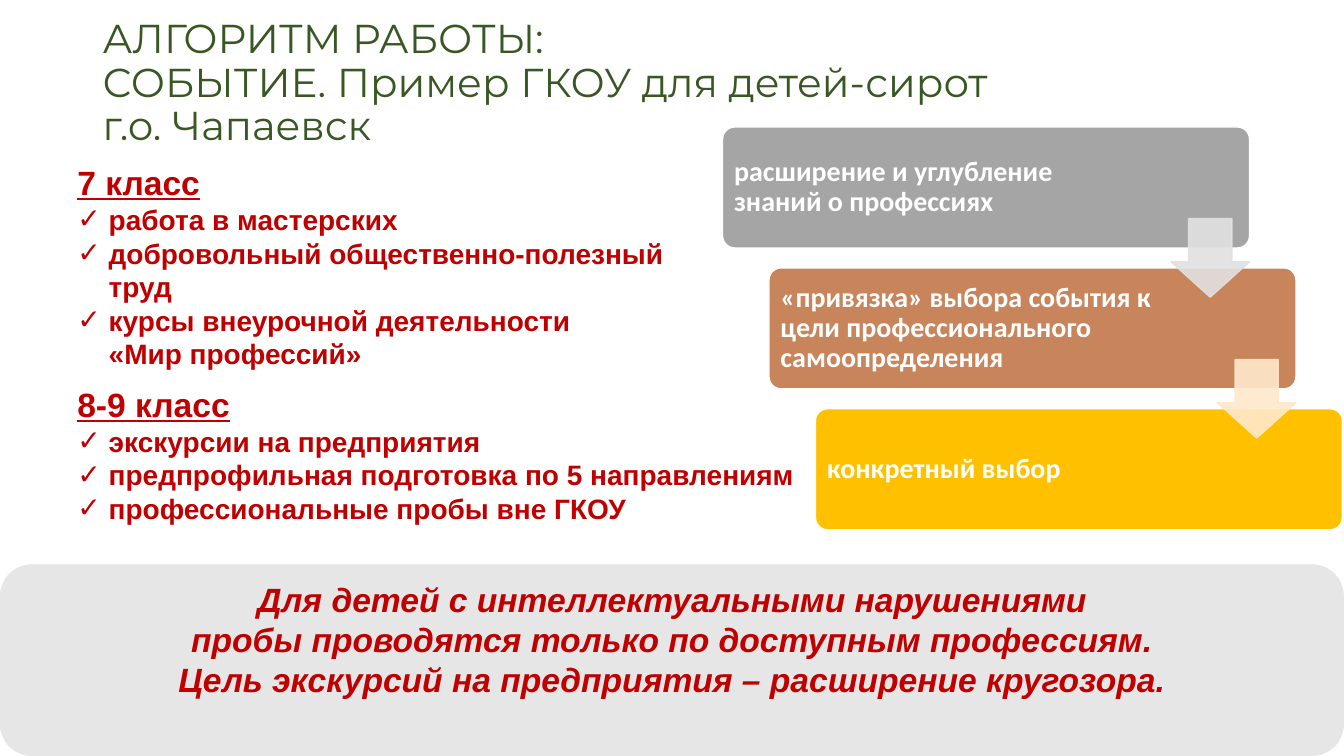
from lxml.etree import SubElement
from pptx import Presentation
from pptx.dml.color import RGBColor
from pptx.enum.shapes import MSO_SHAPE as Shape
from pptx.enum.text import MSO_ANCHOR as Anchor, MSO_AUTO_SIZE as AutoSize, PP_ALIGN as Align
from pptx.oxml.ns import qn
from pptx.util import Cm, Pt

TITLE = "АЛГОРИТМ РАБОТЫ:\nСОБЫТИЕ. Пример ГКОУ для детей-сирот\nг.о. Чапаевск"
CLASSES = [
    ("7 класс", (1.7, 3.96, 15.65, 5.56), [
        "работа в мастерских",
        "добровольный общественно-полезный труд",
        "курсы внеурочной деятельности\n«Мир профессий»",
    ]),
    ("8-9 класс", (1.7, 9.55, 20.68, 3.84), [
        "экскурсии на предприятия",
        "предпрофильная подготовка по 5 направлениям",
        "профессиональные пробы вне ГКОУ",
    ]),
]
STEPS = [
    ("расширение и углубление знаний о профессиях", "A5A5A5"),
    ("«привязка» выбора события к цели профессионального самоопределения", "C8855C"),
    ("конкретный выбор", "FFC000"),
]
ARROW_COLORS = ["E1E1E1", "FFE8CB"]
BANNER = [
    "Для детей с интеллектуальными нарушениями\nпробы проводятся только по доступным профессиям.",
    "Цель экскурсий на предприятия – расширение кругозора.",
]
RED, WHITE = "C00000", "FFFFFF"
STEP_LEFT, STEP_TOP, STEP_WIDTH, STEP_HEIGHT = 18.21, 3.2, 13.28, 3.05
SHIFT_X, SHIFT_Y = 1.17, 3.55
ARROW_LEFT, ARROW_TOP, ARROW_SIZE = 29.51, 5.51, 1.98


def color(value):
    return RGBColor.from_string(value)


def write(para, text, size, font, fill, bold=True, italic=False, underline=False):
    for number, line in enumerate(text.split("\n")):
        if number:
            para.add_line_break()
        span = para.add_run()
        span.text = line
        span.font.size = Pt(size)
        span.font.name = font
        span.font.color.rgb = color(fill)
        span.font.bold = bold
        span.font.italic = italic
        span.font.underline = underline


def add_check(para):
    props = para._p.get_or_add_pPr()
    props.set("marL", str(Cm(0.79)))
    props.set("indent", str(Cm(-0.79)))
    SubElement(props, qn("a:buFont"), typeface="Arial")
    SubElement(props, qn("a:buChar"), char="✓")


def add_text_box(page, place):
    box = page.shapes.add_textbox(*map(Cm, place))
    box.text_frame.word_wrap = True
    return box.text_frame


def add_block(page, kind, place, fill, line=None, alpha=None):
    block = page.shapes.add_shape(kind, *map(Cm, place))
    block.shadow.inherit = False
    block.fill.solid()
    block.fill.fore_color.rgb = color(fill)
    if line:
        block.line.color.rgb = color(line)
        block.line.width = Pt(1)
    else:
        block.line.fill.background()
    if alpha:
        for shade in block._element.spPr.iter(qn("a:srgbClr")):
            SubElement(shade, qn("a:alpha"), val=str(alpha * 1000))
    return block


def add_title(page):
    title = page.shapes.title
    title.left, title.top, title.width, title.height = map(Cm, (2.33, 1.18, 29.21, 1.89))
    frame = title.text_frame
    frame.word_wrap = True
    frame.auto_size = AutoSize.NONE
    frame.vertical_anchor = Anchor.MIDDLE
    para = frame.paragraphs[0]
    para.alignment = Align.LEFT
    para.line_spacing = 0.9
    write(para, TITLE, 28.8, "Montserrat", "385723", bold=False)


def add_class(page, heading, place, items):
    frame = add_text_box(page, place)
    write(frame.paragraphs[0], heading, 24, "Arial", RED, underline=True)
    for item in items:
        para = frame.add_paragraph()
        add_check(para)
        write(para, item, 20, "Arial", RED)


def add_step(page, number, text, fill):
    left = STEP_LEFT + number * SHIFT_X
    top = STEP_TOP + number * SHIFT_Y
    block = add_block(page, Shape.ROUNDED_RECTANGLE, (left, top, STEP_WIDTH, STEP_HEIGHT), fill, WHITE)
    block.adjustments[0] = 0.1
    frame = add_text_box(page, (left + 0.09, top + 0.09, 9.97, STEP_HEIGHT - 0.18))
    frame.vertical_anchor = Anchor.MIDDLE
    frame.margin_left = frame.margin_right = frame.margin_top = frame.margin_bottom = Cm(0.2)
    para = frame.paragraphs[0]
    para.line_spacing = 0.9
    write(para, text, 20, "Calibri", WHITE)


def add_arrow(page, number, fill):
    place = (ARROW_LEFT + number * SHIFT_X, ARROW_TOP + number * SHIFT_Y, ARROW_SIZE, ARROW_SIZE)
    arrow = add_block(page, Shape.DOWN_ARROW, place, fill, fill, alpha=90)
    arrow.adjustments[0] = 0.45
    arrow.adjustments[1] = 0.55
    arrow.adjustments[0], arrow.adjustments[1] = 0.55, 0.45


def add_banner(page):
    banner = add_block(page, Shape.ROUNDED_RECTANGLE, (0, 14.22, 33.87, 4.83), "E7E6E6")
    frame = banner.text_frame
    frame.word_wrap = True
    frame.vertical_anchor = Anchor.TOP
    for number, text in enumerate(BANNER):
        para = frame.add_paragraph() if number else frame.paragraphs[0]
        para.alignment = Align.CENTER
        write(para, text, 24, "Arial", RED, italic=True)


def main():
    deck = Presentation()
    deck.slide_width, deck.slide_height = Cm(33.87), Cm(19.05)
    page = deck.slides.add_slide(deck.slide_layouts[5])
    add_title(page)
    for heading, place, items in CLASSES:
        add_class(page, heading, place, items)
    for number, (text, fill) in enumerate(STEPS):
        add_step(page, number, text, fill)
    for number, fill in enumerate(ARROW_COLORS):
        add_arrow(page, number, fill)
    add_banner(page)
    deck.save("out.pptx")


if __name__ == "__main__":
    main()
